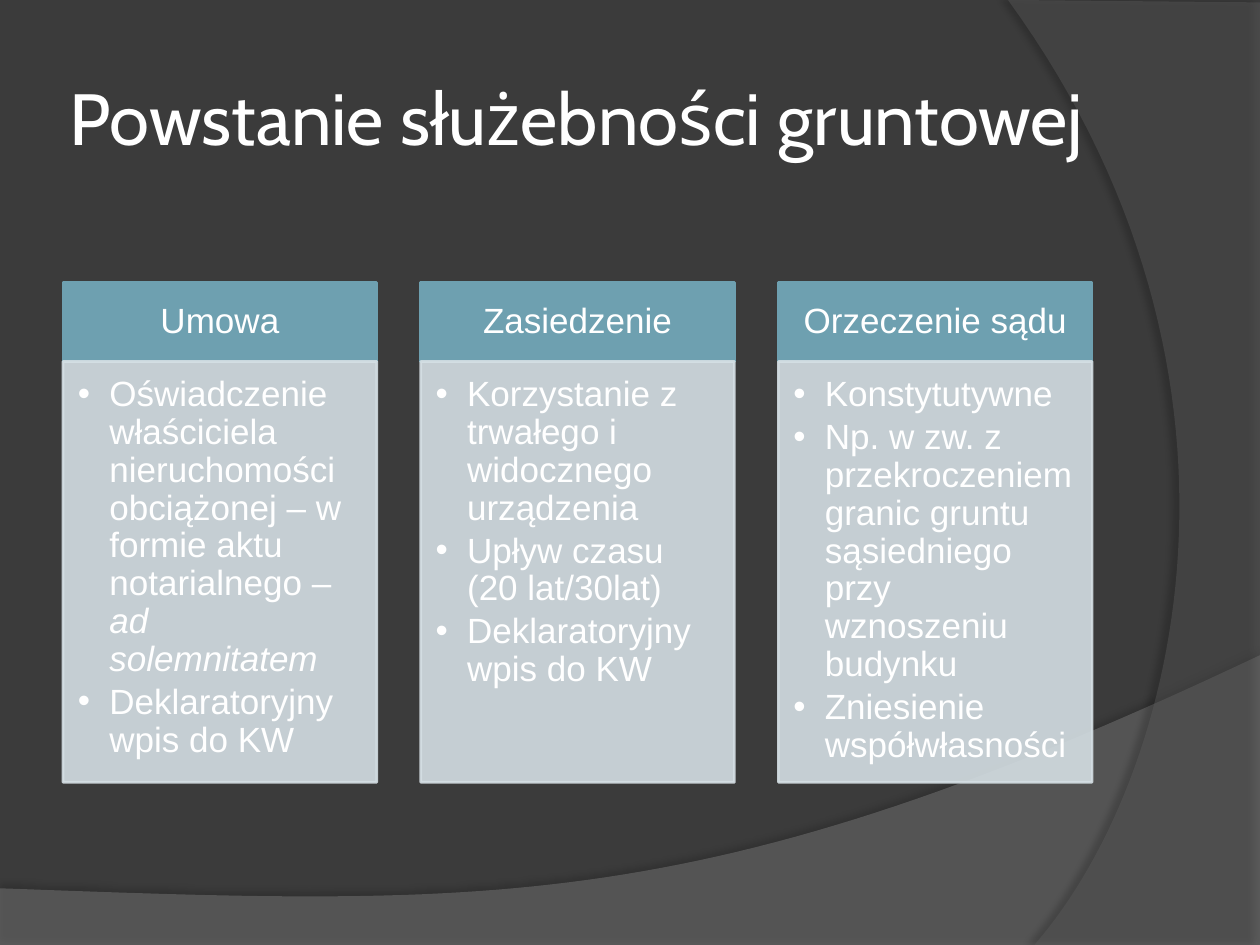
from dataclasses import dataclass

from lxml import etree
from pptx import Presentation
from pptx.dml.color import RGBColor
from pptx.enum.shapes import MSO_SHAPE
from pptx.enum.text import MSO_ANCHOR, PP_ALIGN
from pptx.oxml.ns import qn
from pptx.util import Pt

RECT = MSO_SHAPE.RECTANGLE
TOP, MIDDLE = MSO_ANCHOR.TOP, MSO_ANCHOR.MIDDLE
LEFT, CENTER = PP_ALIGN.LEFT, PP_ALIGN.CENTER
WHITE, TEAL, PALE = "FFFFFF", "6EA0B0", "D5DFE4"

Point = tuple[float, float]
Run = tuple[str, bool]  # text, italic


@dataclass
class Column:
    head: str
    items: list[list[Run]]


@dataclass
class Swoosh:
    before: list[Point]
    curve: list[Point]  # four Bezier points
    color: str
    alpha: int
    shade: int
    dist: float
    angle: int


COLUMNS = [
    Column("Umowa", [
        [("Oświadczenie właściciela nieruchomości obciążonej – w formie aktu notarialnego – ", False),
         ("ad solemnitatem", True)],
        [("Deklaratoryjny wpis do KW", False)],
    ]),
    Column("Zasiedzenie", [
        [("Korzystanie z trwałego i widocznego urządzenia", False)],
        [("Upływ czasu (20 lat/30lat)", False)],
        [("Deklaratoryjny wpis do KW", False)],
    ]),
    Column("Orzeczenie sądu", [
        [("Konstytutywne", False)],
        [("Np. w zw. z przekroczeniem granic gruntu sąsiedniego przy wznoszeniu budynku", False)],
        [("Zniesienie współwłasności", False)],
    ]),
]

SWOOSHES = [
    Swoosh([(0, 507.6), (0, 540.7), (720, 540.7)],
           [(720, 374.4), (402.5, 524.9), (281.5, 517.7), (0, 507.6)],
           "7F7F7F", 45, 35, 3.5, 270),
    Swoosh([(720, 1.4), (720, 540)],
           [(591.1, 540), (673.2, 445.7), (733, 216), (576, 0)],
           "5E5E5E", 40, 45, 4, 180),
]


def rgb(color: str) -> RGBColor:
    return RGBColor.from_string(color)


def fade(shape, alpha: int) -> None:
    """Set the opacity of fill and line, in percent."""
    for tag in shape._element.spPr.iter(qn("a:srgbClr")):
        etree.SubElement(tag, qn("a:alpha"), val=str(alpha * 1000))


def bezier(ends: list[Point], steps: int = 60) -> list[Point]:
    a, b, c, d = ends
    points = []
    for i in range(steps + 1):
        t = i / steps
        u = 1 - t
        mix = (u ** 3, 3 * u * u * t, 3 * u * t * t, t ** 3)
        points.append(tuple(sum(m * p[k] for m, p in zip(mix, (a, b, c, d))) for k in (0, 1)))
    return points


def draw_swoosh(slide, item: Swoosh) -> None:
    first, *rest = [(Pt(x), Pt(y)) for x, y in item.before + bezier(item.curve)]
    path = slide.shapes.build_freeform(*first)
    path.add_line_segments(rest, close=True)
    shape = path.convert_to_shape()
    shape.fill.solid()
    shape.fill.fore_color.rgb = rgb(item.color)
    shape.line.fill.background()
    fade(shape, item.alpha)
    # Soft outer shadow
    shape.shadow.inherit = False
    effects = shape._element.spPr.find(qn("a:effectLst"))
    shadow = etree.SubElement(effects, qn("a:outerShdw"), blurRad=str(Pt(4)),
                              dist=str(Pt(item.dist)), dir=str(item.angle * 60000),
                              algn="ctr", rotWithShape="0")
    black = etree.SubElement(shadow, qn("a:srgbClr"), val="000000")
    etree.SubElement(black, qn("a:alpha"), val=str(item.shade * 1000))


def set_frame(shape, anchor, inset: tuple[float, ...]):
    frame = shape.text_frame
    names = ("margin_left", "margin_top", "margin_right", "margin_bottom")
    form = {"word_wrap": True, "vertical_anchor": anchor,
            **dict(zip(names, map(Pt, inset)))}
    for name, value in form.items():
        setattr(frame, name, value)
    return frame


def add_runs(para, runs: list[Run], size: float, face: str) -> None:
    for text, slant in runs:
        run = para.add_run()
        run.text = text
        form = {"size": Pt(size), "name": face, "italic": slant}
        for name, value in form.items():
            setattr(run.font, name, value)
        run.font.color.rgb = rgb(WHITE)


def add_bullet(para) -> None:
    props = para._p.get_or_add_pPr()
    props.set("marL", str(Pt(18)))
    props.set("indent", str(-Pt(18)))
    etree.SubElement(props, qn("a:buFont"), typeface="Arial")
    etree.SubElement(props, qn("a:buChar"), char="•")


def add_box(slide, box: tuple[float, ...], color: str):
    shape = slide.shapes.add_shape(RECT, *map(Pt, box))
    shape.shadow.inherit = False
    shape.fill.solid()
    shape.fill.fore_color.rgb = rgb(color)
    shape.line.color.rgb = rgb(color)
    shape.line.width = Pt(1.5)
    return shape


def draw_column(slide, left: float, item: Column) -> None:
    # Header
    head = add_box(slide, (left, 161.4, 179.3, 45.2), TEAL)
    frame = set_frame(head, MIDDLE, (11.5, 6.5, 11.5, 6.5))
    para = frame.paragraphs[0]
    para.alignment = CENTER
    para.line_spacing = 0.9
    add_runs(para, [(item.head, False)], 20, "Arial")

    # Bulleted body, with a right inset that lets the longest word fit
    body = add_box(slide, (left, 206.6, 179.3, 240.5), PALE)
    fade(body, 90)
    frame = set_frame(body, TOP, (8.5, 8.5, 10, 12.5))
    for i, runs in enumerate(item.items):
        para = frame.add_paragraph() if i else frame.paragraphs[0]
        form = {"alignment": LEFT, "level": 1, "line_spacing": 0.9, "space_after": Pt(3)}
        for name, value in form.items():
            setattr(para, name, value)
        add_bullet(para)
        add_runs(para, runs, 20, "Arial")


def main() -> None:
    deck = Presentation()
    deck.slide_width, deck.slide_height = Pt(720), Pt(540)
    slide = deck.slides.add_slide(deck.slide_layouts[6])

    # Backdrop
    slide.background.fill.solid()
    slide.background.fill.fore_color.rgb = rgb("3B3B3B")
    for item in SWOOSHES:
        draw_swoosh(slide, item)

    # Title
    title = slide.shapes.add_textbox(*map(Pt, (36, 21.6, 588, 90)))
    frame = set_frame(title, MIDDLE, (3.6,) * 4)
    add_runs(frame.paragraphs[0], [("Powstanie służebności gruntowej", False)], 41.4, "Cabin")

    # Three columns
    for i, item in enumerate(COLUMNS):
        draw_column(slide, 36 + i * 204.4, item)

    deck.save("out.pptx")


if __name__ == "__main__":
    main()
